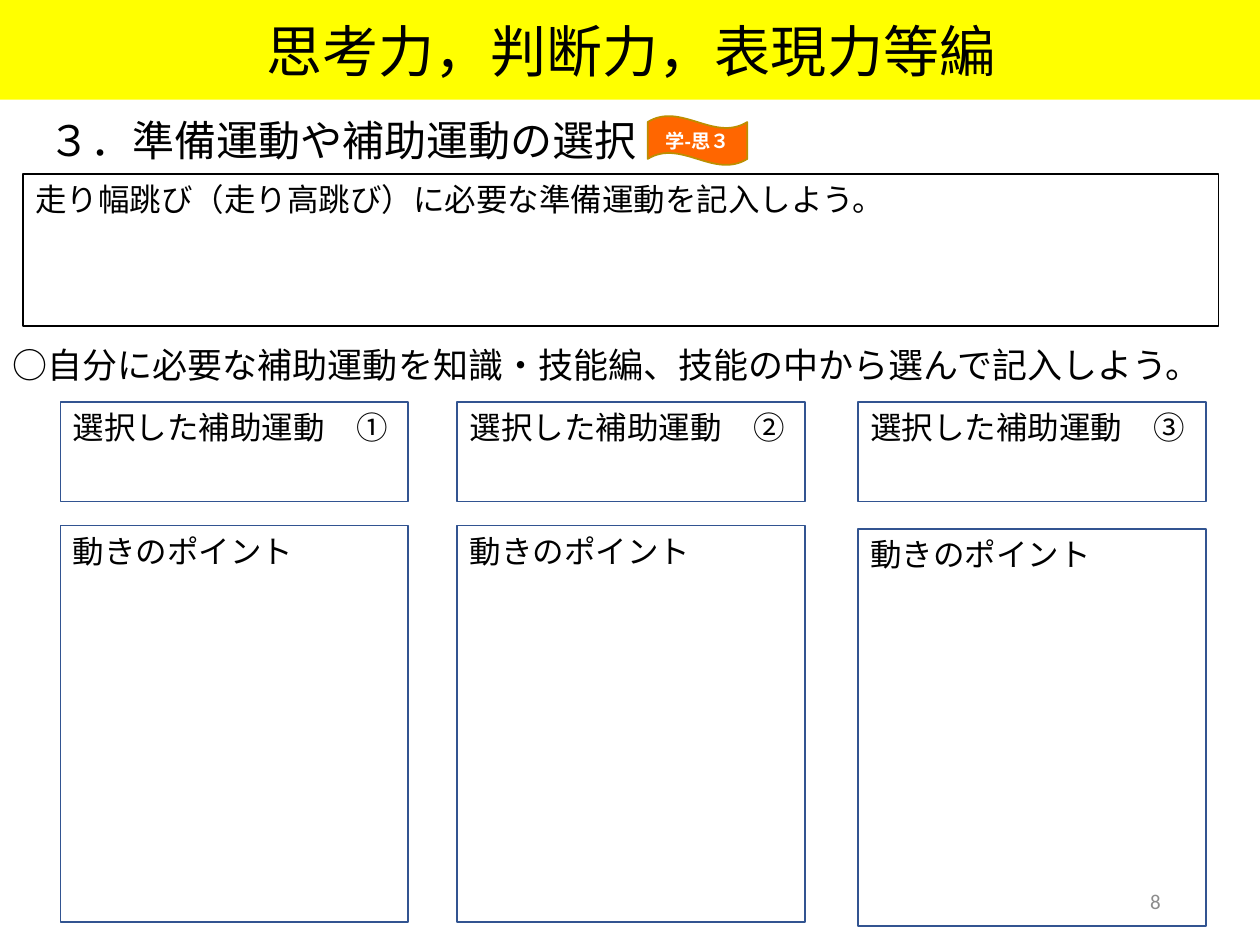
from dataclasses import dataclass

from lxml import etree
from pptx import Presentation
from pptx.dml.color import RGBColor
from pptx.enum.shapes import MSO_SHAPE
from pptx.enum.text import MSO_ANCHOR, PP_ALIGN
from pptx.oxml.ns import qn
from pptx.util import Inches, Pt

RECTANGLE, WAVE = MSO_SHAPE.RECTANGLE, MSO_SHAPE.WAVE
TOP, MIDDLE = MSO_ANCHOR.TOP, MSO_ANCHOR.MIDDLE
LEFT, CENTER, RIGHT = PP_ALIGN.LEFT, PP_ALIGN.CENTER, PP_ALIGN.RIGHT

JAPANESE_FONT = "Noto Sans CJK JP"
BLACK, WHITE, GRAY = "000000", "FFFFFF", "8C8C8C"
YELLOW, ORANGE, GOLD, BLUE = "FFFF00", "FF6600", "BD8E00", "325491"

PAGE_WIDTH, PAGE_HEIGHT = 10, 7.5
BANNER_WIDTH = PAGE_WIDTH + 0.02
CARD_WIDTH, CHOICE_TOP, CHOICE_HEIGHT, POINT_HEIGHT = 2.76, 3.19, 0.79, 3.15


@dataclass(frozen=True)
class Box:
    """A rectangle on the page, in inches."""
    left: float
    top: float
    width: float
    height: float

    def lengths(self) -> list:
        return [Inches(n) for n in (self.left, self.top, self.width, self.height)]


@dataclass(frozen=True)
class Column:
    number: str
    left: float
    point_top: float


COLUMNS = (
    Column("①", 0.48, 4.17),
    Column("②", 3.63, 4.17),
    Column("③", 6.81, 4.2),
)


def color(value: str) -> RGBColor:
    return RGBColor.from_string(value)


def write(shape, text: str, *, size: float = 18, font: str = JAPANESE_FONT,
          ink: str = BLACK, bold: bool = False, align=LEFT, anchor=TOP,
          wrap: bool = True) -> None:
    frame = shape.text_frame
    frame.word_wrap = wrap
    frame.vertical_anchor = anchor
    para = frame.paragraphs[0]
    para.alignment = align
    span = para.add_run()
    span.text = text
    span.font.size = Pt(size)
    span.font.bold = bold
    span.font.color.rgb = color(ink)
    span.font.name = font
    east_asian = etree.SubElement(span.font._element, qn("a:ea"))
    east_asian.set("typeface", JAPANESE_FONT)


def add_label(page, box: Box, text: str, **text_format) -> None:
    write(page.shapes.add_textbox(*box.lengths()), text, **text_format)


def add_panel(page, box: Box, text: str, *, kind=RECTANGLE, fill: str | None = None,
              line: str | None = None, **text_format) -> None:
    shape = page.shapes.add_shape(kind, *box.lengths())
    shape.shadow.inherit = False
    if fill:
        shape.fill.solid()
        shape.fill.fore_color.rgb = color(fill)
    else:
        shape.fill.background()
    if line:
        shape.line.color.rgb = color(line)
        shape.line.width = Pt(1)
    else:
        shape.line.fill.background()
    write(shape, text, **text_format)


def main() -> None:
    deck = Presentation()
    deck.slide_width, deck.slide_height = Inches(PAGE_WIDTH), Inches(PAGE_HEIGHT)
    page = deck.slides.add_slide(deck.slide_layouts[6])

    add_label(page, Box(7.06, 6.95, 2.25, 0.4), "8", size=12, font="Calibri",
              ink=GRAY, align=RIGHT, anchor=MIDDLE)
    add_label(page, Box(0.29, 0.86, 5, 0.5), "３．準備運動や補助運動の選択", size=24)
    add_panel(page, Box(0.18, 1.38, 9.49, 1.21),
              "走り幅跳び（走り高跳び）に必要な準備運動を記入しよう。", line=BLACK)
    add_label(page, Box(0, 2.68, BANNER_WIDTH, 0.44),
              "○自分に必要な補助運動を知識・技能編、技能の中から選んで記入しよう。", size=20)

    for column in COLUMNS:
        add_panel(page, Box(column.left, CHOICE_TOP, CARD_WIDTH, CHOICE_HEIGHT),
                  f"選択した補助運動　{column.number}", line=BLUE)
        add_panel(page, Box(column.left, column.point_top, CARD_WIDTH, POINT_HEIGHT),
                  "動きのポイント", line=BLUE)

    add_panel(page, Box(0, 0, BANNER_WIDTH, 0.79), "思考力，判断力，表現力等編",
              fill=YELLOW, size=32, align=CENTER, anchor=MIDDLE, wrap=False)
    add_panel(page, Box(5.14, 0.92, 0.79, 0.39), "学-思３", kind=WAVE, fill=ORANGE,
              line=GOLD, size=11, font="Arial", ink=WHITE, bold=True,
              align=CENTER, anchor=MIDDLE, wrap=False)

    deck.save("out.pptx")


if __name__ == "__main__":
    main()
